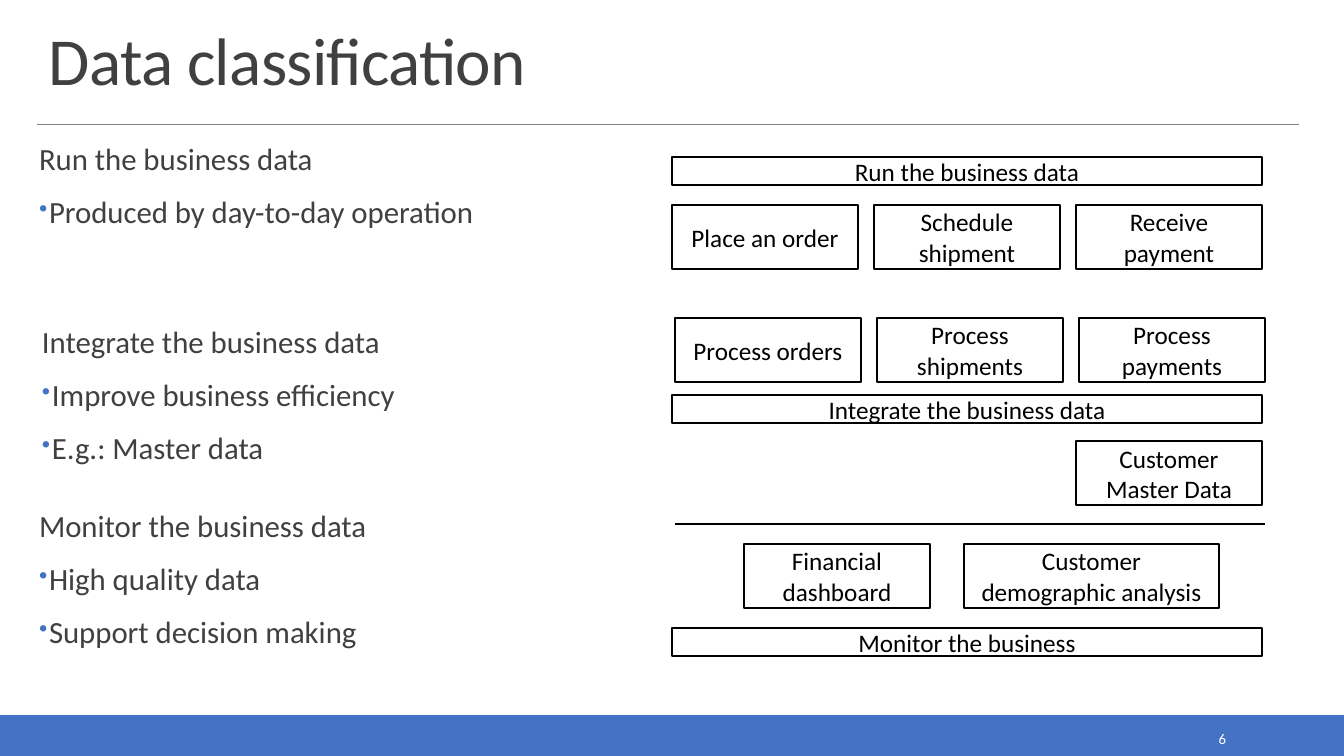
from lxml import etree
from pptx import Presentation
from pptx.dml.color import RGBColor
from pptx.enum.shapes import MSO_CONNECTOR as Link, MSO_SHAPE as Preset
from pptx.enum.text import MSO_ANCHOR as Anchor, PP_ALIGN as Align
from pptx.oxml.ns import qn
from pptx.util import Emu, Pt

WIDTH, HEIGHT = 1344, 756
EMU_PER_PX = 12192000 / WIDTH


def px(length):
    return Emu(round(length * EMU_PER_PX))


def color(hex_code):
    return RGBColor.from_string(hex_code)


def apply(target, values):
    for name, value in values.items():
        setattr(target, name, value)


class SlideBuilder:
    FONT = "Calibri"
    ACCENT, BODY, BLACK, WHITE, GREY = "4472C4", "404040", "000000", "FFFFFF", "808080"
    BULLETED = {"line_spacing": 0.9, "space_before": Pt(12), "space_after": Pt(2)}
    INDENT = 10

    def __init__(self, slide):
        self.shapes = slide.shapes

    def add_words(self, paragraph, words, size, hex_code, spacing=None, **layout):
        apply(paragraph, layout)
        run = paragraph.add_run()
        run.text = words
        apply(run.font, {"name": self.FONT, "size": Pt(size)})
        run.font.color.rgb = color(hex_code)
        if spacing is not None:
            run._r.get_or_add_rPr().set("spc", str(spacing))

    def frame(self, left, top, width, height, **layout):
        text_frame = self.shapes.add_textbox(px(left), px(top), px(width), px(height)).text_frame
        apply(text_frame, {"word_wrap": True, **layout})
        return text_frame

    def bullet(self, paragraph):
        props = paragraph._p.get_or_add_pPr()
        props.set("marL", str(px(self.INDENT)))
        props.set("indent", str(-px(self.INDENT)))
        tint = etree.SubElement(props, qn("a:buClr"))
        etree.SubElement(tint, qn("a:srgbClr"), val=self.ACCENT)
        etree.SubElement(props, qn("a:buSzPct"), val="80000")
        etree.SubElement(props, qn("a:buChar"), char="•")

    def topic(self, left, top, heading, points):
        text_frame = self.frame(left, top, 590, 160, margin_left=0, margin_right=0,
                                margin_top=px(4), margin_bottom=px(4))
        self.add_words(text_frame.paragraphs[0], heading, 22, self.BODY, **self.BULLETED)
        for point in points:
            paragraph = text_frame.add_paragraph()
            self.add_words(paragraph, point, 22, self.BODY, **self.BULLETED)
            self.bullet(paragraph)

    def rectangle(self, left, top, width, height, line, fill=None):
        rect = self.shapes.add_shape(Preset.RECTANGLE, px(left), px(top), px(width), px(height))
        rect.shadow.inherit = False
        rect.line.color.rgb = color(line)
        rect.line.width = Pt(1.25)
        if fill:
            rect.fill.solid()
            rect.fill.fore_color.rgb = color(fill)
        else:
            rect.fill.background()
        return rect

    def box(self, left, top, words, width=186, height=64):
        text_frame = self.rectangle(left, top, width, height, self.BLACK).text_frame
        apply(text_frame, {"word_wrap": True, "vertical_anchor": Anchor.MIDDLE})
        self.add_words(text_frame.paragraphs[0], words, 18, self.BLACK, alignment=Align.CENTER)

    def rule(self, left, right, y, hex_code, weight):
        line = self.shapes.add_connector(Link.STRAIGHT, px(left), px(y), px(right), px(y))
        line.line.color.rgb = color(hex_code)
        line.line.width = Pt(weight)
        etree.SubElement(line._element.spPr, qn("a:effectLst"))


def main():
    deck = Presentation()
    apply(deck, {"slide_width": px(WIDTH), "slide_height": px(HEIGHT)})
    page = SlideBuilder(deck.slides.add_slide(deck.slide_layouts[6]))

    # Footer band, title and page number
    page.rectangle(0, 716, WIDTH, 40, page.ACCENT, fill=page.ACCENT)
    page.rule(37, 1299, 124, page.GREY, 0.5)
    title = page.frame(39, 20, 1262, 84, vertical_anchor=Anchor.BOTTOM)
    page.add_words(title.paragraphs[0], "Data classification", 48, page.BODY,
                   spacing=-50, line_spacing=0.85)
    number = page.frame(1092, 725, 144, 28, vertical_anchor=Anchor.MIDDLE)
    page.add_words(number.paragraphs[0], "6", 10.5, page.WHITE, alignment=Align.RIGHT)

    # Topics on the left
    topics = [
        (39, 140, "Run the business data", ["Produced by day-to-day operation"]),
        (42, 323, "Integrate the business data",
         ["Improve business efficiency", "E.g.: Master data"]),
        (39, 507, "Monitor the business data",
         ["High quality data", "Support decision making"]),
    ]
    for topic in topics:
        page.topic(*topic)

    # Full-width headings of the diagram
    diagram_left, step = 672, 202
    headings = [(157, "Run the business data"), (395, "Integrate the business data"),
                (628, "Monitor the business")]
    for top, heading in headings:
        page.box(diagram_left, top, heading, width=590, height=28)

    # Rows of three activities
    activities = [
        (diagram_left, 205, ["Place an order", "Schedule shipment", "Receive payment"]),
        (diagram_left + 3, 318, ["Process orders", "Process shipments", "Process payments"]),
    ]
    for left, top, names in activities:
        for column, name in enumerate(names):
            page.box(left + column * step, top, name)

    # Master data, divider and monitoring products
    page.box(diagram_left + 2 * step, 441, "Customer Master Data")
    page.rule(675, 1265, 524, page.BLACK, 1)
    page.box(744, 544, "Financial dashboard")
    page.box(964, 544, "Customer demographic analysis", width=255)

    deck.save("out.pptx")


if __name__ == "__main__":
    main()
